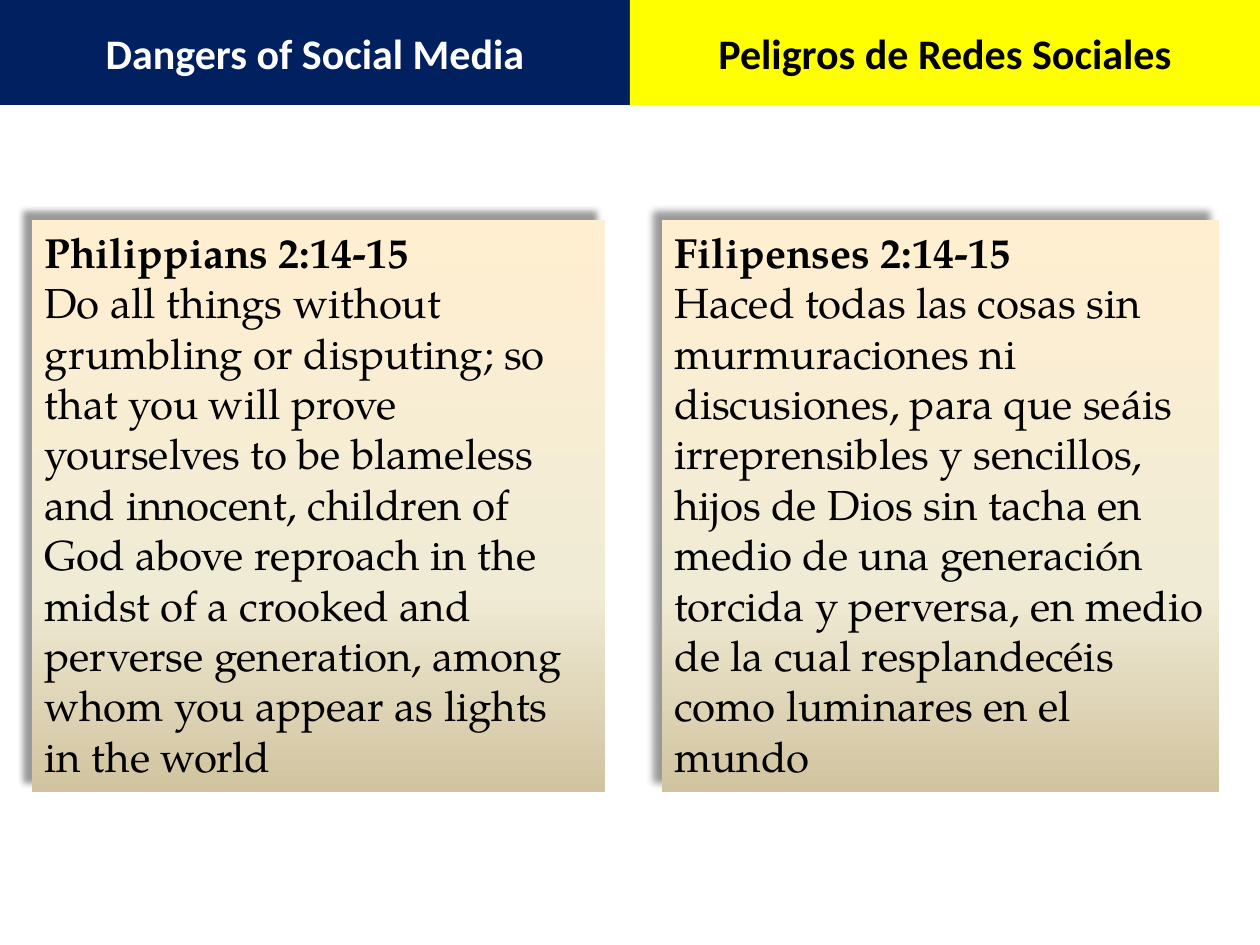
import copy
from dataclasses import dataclass

import pptx
import pptx.dml.color
import pptx.enum.shapes
import pptx.enum.text
import pptx.oxml
import pptx.oxml.ns
import pptx.util

EMU_PER_INCH = 914400
PX_PER_INCH = 126
SLIDE_WIDTH, SLIDE_HEIGHT = 1260, 945
HEADER_HEIGHT = 105
VERSE_TOP, VERSE_HEIGHT, VERSE_INDENT = 220, 572, 32
TEXT_SIZE = 24
HEADING_FONT, VERSE_FONT = "Calibri", "TeX Gyre Pagella"

COLORS = {
    "navy": "002060",
    "yellow": "FFFF00",
    "white": "FFFFFF",
    "black": "000000",
    "cream": "FFEFD1",
    "ivory": "F0EBD5",
    "sand": "D1C39F",
}
PARCHMENT = [(0, "cream"), (0.65, "ivory"), (1, "sand")]


@dataclass
class Column:
    heading: str
    heading_fill: str
    heading_color: str
    reference: str
    verse: str
    verse_width: int


COLUMNS = [
    Column(
        "Dangers of Social Media", "navy", "white",
        "Philippians 2:14-15",
        "Do all things without grumbling or disputing; so that you will prove "
        "yourselves to be blameless and innocent, children of God above reproach "
        "in the midst of a crooked and perverse generation, among whom you appear "
        "as lights in the world",
        573,
    ),
    Column(
        "Peligros de Redes Sociales", "yellow", "black",
        "Filipenses 2:14-15",
        "Haced todas las cosas sin murmuraciones ni discusiones, para que seáis "
        "irreprensibles y sencillos, hijos de Dios sin tacha en medio de una "
        "generación torcida y perversa, en medio de la cual resplandecéis como "
        "luminares en el mundo",
        557,
    ),
]


def px(length: int) -> pptx.util.Emu:
    return pptx.util.Emu(round(length * EMU_PER_INCH / PX_PER_INCH))


def rgb(name: str) -> pptx.dml.color.RGBColor:
    return pptx.dml.color.RGBColor.from_string(COLORS[name])


def add_box(page, left: int, top: int, width: int, height: int):
    """Add a rectangle without outline or shadow."""
    box = page.shapes.add_shape(
        pptx.enum.shapes.MSO_SHAPE.RECTANGLE, px(left), px(top), px(width), px(height)
    )
    box.shadow.inherit = False
    box.line.fill.background()
    box.text_frame.word_wrap = True
    return box


def format_paragraph(para, font: str, color: str, bold: bool, alignment) -> None:
    para.alignment = alignment
    for span in para.runs:
        span.font.name = font
        span.font.size = pptx.util.Pt(TEXT_SIZE)
        span.font.bold = bold
        span.font.color.rgb = rgb(color)


def fill_parchment(box) -> None:
    box.fill.gradient()
    box.fill.gradient_angle = 270
    stop_list = box.fill.gradient_stops
    stops = box._element.spPr.find(".//" + pptx.oxml.ns.qn("a:gsLst"))
    while len(stops) < len(PARCHMENT):
        stops.append(copy.deepcopy(stops[0]))
    stop_list = box.fill.gradient_stops
    for stop, (position, color) in zip(stop_list, PARCHMENT):
        stop.position = position
        stop.color.rgb = rgb(color)


def add_shadow(box) -> None:
    """Cast a soft shadow towards the upper left."""
    effects = box._element.spPr.find(pptx.oxml.ns.qn("a:effectLst"))
    effects.append(pptx.oxml.parse_xml(
        f'<a:outerShdw {pptx.oxml.ns.nsdecls("a")} blurRad="{pptx.util.Pt(4)}" '
        f'dist="{pptx.util.Pt(7)}" dir="{225 * 60000}" algn="br" rotWithShape="0">'
        f'<a:srgbClr val="{COLORS["black"]}"><a:alpha val="40000"/></a:srgbClr>'
        "</a:outerShdw>"
    ))


def add_heading(page, column: Column, left: int, width: int) -> None:
    box = add_box(page, left, 0, width, HEADER_HEIGHT)
    box.fill.solid()
    box.fill.fore_color.rgb = rgb(column.heading_fill)
    frame = box.text_frame
    frame.text = column.heading
    frame.vertical_anchor = pptx.enum.text.MSO_ANCHOR.MIDDLE
    format_paragraph(frame.paragraphs[0], HEADING_FONT, column.heading_color, True,
                     pptx.enum.text.PP_ALIGN.CENTER)


def add_verse(page, column: Column, left: int) -> None:
    box = add_box(page, left, VERSE_TOP, column.verse_width, VERSE_HEIGHT)
    fill_parchment(box)
    add_shadow(box)
    frame = box.text_frame
    frame.text = f"{column.reference}\n{column.verse}"
    frame.vertical_anchor = pptx.enum.text.MSO_ANCHOR.TOP
    frame.auto_size = pptx.enum.text.MSO_AUTO_SIZE.SHAPE_TO_FIT_TEXT
    for para, bold in zip(frame.paragraphs, (True, False)):
        format_paragraph(para, VERSE_FONT, "black", bold,
                         pptx.enum.text.PP_ALIGN.LEFT)


def main() -> None:
    deck = pptx.Presentation()
    deck.slide_width, deck.slide_height = px(SLIDE_WIDTH), px(SLIDE_HEIGHT)
    page = deck.slides.add_slide(deck.slide_layouts[6])
    column_width = SLIDE_WIDTH // len(COLUMNS)
    for index, column in enumerate(COLUMNS):
        left = index * column_width
        add_heading(page, column, left, column_width)
        add_verse(page, column, left + VERSE_INDENT)
    deck.save("out.pptx")


if __name__ == "__main__":
    main()
